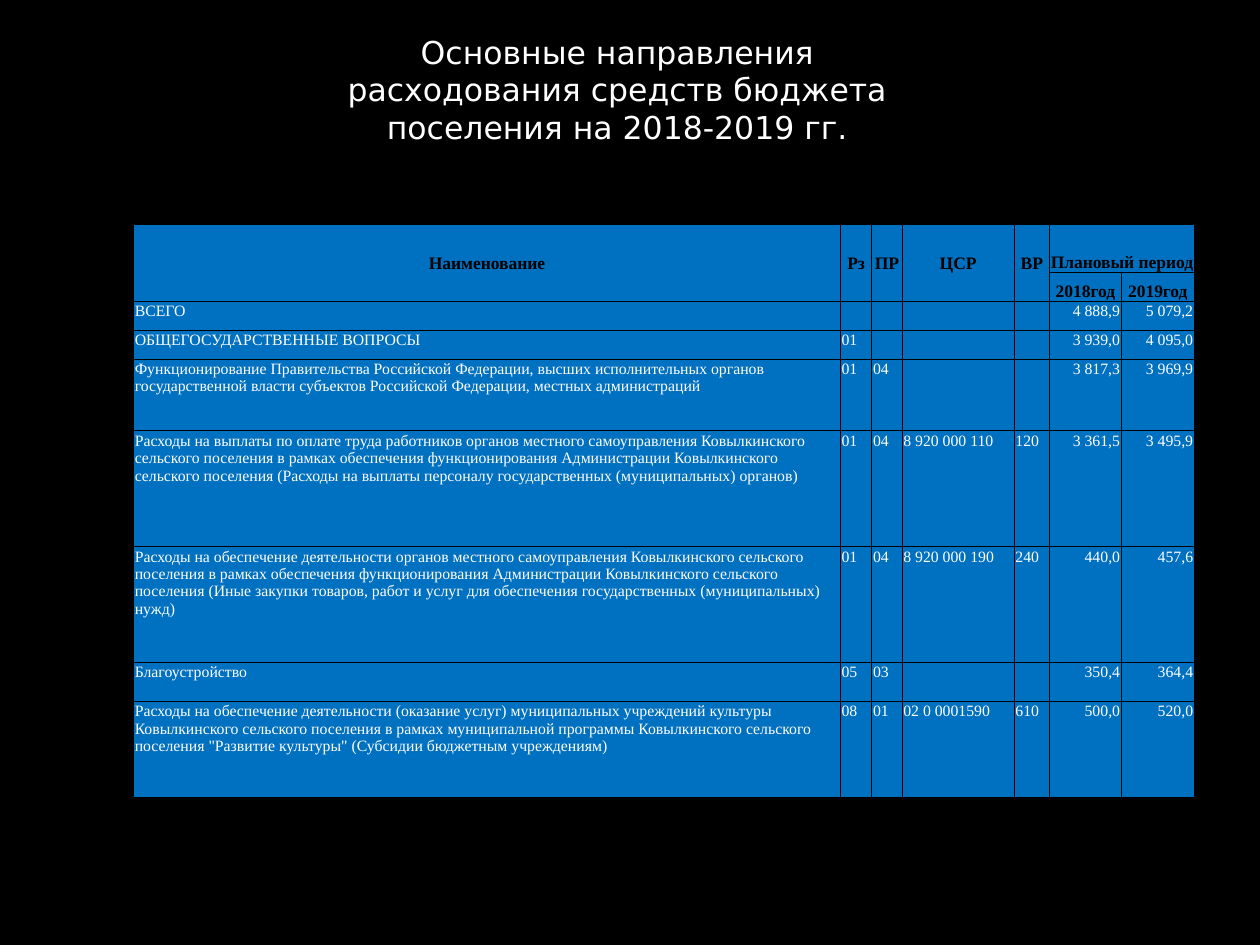
from lxml import etree
from pptx import Presentation
from pptx.dml.color import RGBColor
from pptx.enum.text import MSO_ANCHOR, PP_ALIGN
from pptx.oxml.ns import qn
from pptx.util import Inches, Pt

LEFT, CENTER, RIGHT = PP_ALIGN.LEFT, PP_ALIGN.CENTER, PP_ALIGN.RIGHT
TOP, MIDDLE, BOTTOM = MSO_ANCHOR.TOP, MSO_ANCHOR.MIDDLE, MSO_ANCHOR.BOTTOM
COLORS = {"background": "000000", "title": "FFFFFF", "cell": "0070C0",
          "header": "000000", "body": "FFFFFF", "border": "000000"}
TITLE_FONT, TABLE_FONT = "DejaVu Sans", "Times New Roman"
TITLE = "Основные направления расходования средств бюджета поселения на 2018-2019 гг."
COLUMN_WIDTHS = [5.61, 0.25, 0.24, 0.89, 0.28, 0.57, 0.58]
ROW_HEIGHTS = [0.38, 0.23, 0.23, 0.23, 0.57, 0.92, 0.92, 0.31, 0.76]
HEADER_ROWS = 2
FIRST_YEAR_COLUMN = 5
BUDGET = [
    ["Наименование", "Рз", "ПР", "ЦСР", "ВР", "Плановый период", ""],
    ["", "", "", "", "", "2018год", "2019год"],
    ["ВСЕГО", "", "", "", "", "4 888,9", "5 079,2"],
    ["ОБЩЕГОСУДАРСТВЕННЫЕ ВОПРОСЫ", "01", "", "", "", "3 939,0", "4 095,0"],
    ["Функционирование Правительства Российской Федерации, высших исполнительных "
     "органов государственной власти субъектов Российской Федерации, местных "
     "администраций", "01", "04", "", "", "3 817,3", "3 969,9"],
    ["Расходы на выплаты по оплате труда работников органов местного самоуправления "
     "Ковылкинского сельского поселения в рамках обеспечения функционирования "
     "Администрации Ковылкинского сельского поселения (Расходы на выплаты персоналу "
     "государственных (муниципальных) органов)",
     "01", "04", "8 920 000 110", "120", "3 361,5", "3 495,9"],
    ["Расходы на обеспечение деятельности органов местного самоуправления "
     "Ковылкинского сельского поселения в рамках обеспечения функционирования "
     "Администрации Ковылкинского сельского поселения (Иные закупки товаров, работ и "
     "услуг для обеспечения государственных (муниципальных) нужд)",
     "01", "04", "8 920 000 190", "240", "440,0", "457,6"],
    ["Благоустройство", "05", "03", "", "", "350,4", "364,4"],
    ["Расходы на обеспечение деятельности (оказание услуг) муниципальных учреждений "
     "культуры Ковылкинского сельского поселения в рамках муниципальной программы "
     "Ковылкинского сельского поселения \"Развитие культуры\" (Субсидии бюджетным "
     "учреждениям)", "08", "01", "02 0 0001590", "610", "500,0", "520,0"],
]


def style_text(paragraph, font_name, size, color, align, bold=False):
    """Format a paragraph and its runs."""
    paragraph.alignment = align
    for run in paragraph.runs:
        run.font.name = font_name
        run.font.size = Pt(size)
        run.font.bold = bold
        run.font.color.rgb = RGBColor.from_string(color)


def add_borders(cell):
    """Draw a thin line on all four sides of a cell."""
    properties = cell._tc.get_or_add_tcPr()
    for side in ("a:lnL", "a:lnR", "a:lnT", "a:lnB"):
        line = etree.SubElement(properties, qn(side), w=str(Pt(0.5)))
        fill = etree.SubElement(line, qn("a:solidFill"))
        etree.SubElement(fill, qn("a:srgbClr"), val=COLORS["border"])


def fill_cell(cell, text, row, column):
    """Write one budget cell in the style of its row and column."""
    is_header = row < HEADER_ROWS
    is_year = column >= FIRST_YEAR_COLUMN
    size = 10 if is_header else 9
    cell.margin_left = cell.margin_right = cell.margin_top = Inches(0.01)
    cell.margin_bottom = 0
    add_borders(cell)
    cell.fill.solid()
    cell.fill.fore_color.rgb = RGBColor.from_string(COLORS["cell"])
    if is_header:
        cell.vertical_anchor = BOTTOM if is_year else MIDDLE
        align, color = CENTER, COLORS["header"]
    else:
        cell.vertical_anchor = TOP
        align, color = (RIGHT if is_year else LEFT), COLORS["body"]
    cell.text_frame.text = text
    paragraph = cell.text_frame.paragraphs[0]
    style_text(paragraph, TABLE_FONT, size, color, align, is_header)
    if not text:
        etree.SubElement(paragraph._p, qn("a:endParaRPr"), sz=str(size * 100))


def add_title(slide, left, top, width, height):
    """Place the centred slide title."""
    frame = slide.shapes.add_textbox(left, top, width, height).text_frame
    frame.word_wrap = True
    frame.text = TITLE
    style_text(frame.paragraphs[0], TITLE_FONT, 18, COLORS["title"], CENTER)


def add_budget_table(slide, left, top, width, height):
    """Place the table of budget spending by year."""
    table = slide.shapes.add_table(len(ROW_HEIGHTS), len(COLUMN_WIDTHS),
                                   left, top, width, height).table
    for column, column_width in zip(table.columns, COLUMN_WIDTHS):
        column.width = Inches(column_width)
    for row, row_height in zip(table.rows, ROW_HEIGHTS):
        row.height = Inches(row_height)
    for r, entries in enumerate(BUDGET):
        for c, text in enumerate(entries):
            fill_cell(table.cell(r, c), text, r, c)
    for c in range(FIRST_YEAR_COLUMN):
        table.cell(0, c).merge(table.cell(HEADER_ROWS - 1, c))
    table.cell(0, FIRST_YEAR_COLUMN).merge(table.cell(0, len(COLUMN_WIDTHS) - 1))


def main():
    """Build the budget slide and save it."""
    deck = Presentation()
    deck.slide_width, deck.slide_height = Inches(10), Inches(7.5)
    slide = deck.slides.add_slide(deck.slide_layouts[6])
    slide.background.fill.solid()
    slide.background.fill.fore_color.rgb = RGBColor.from_string(COLORS["background"])
    add_budget_table(slide, Inches(1.06), Inches(1.78),
                     Inches(sum(COLUMN_WIDTHS)), Inches(sum(ROW_HEIGHTS)))
    add_title(slide, Inches(2.4), Inches(0.21), Inches(5), Inches(1.01))
    deck.save("out.pptx")


if __name__ == "__main__":
    main()
